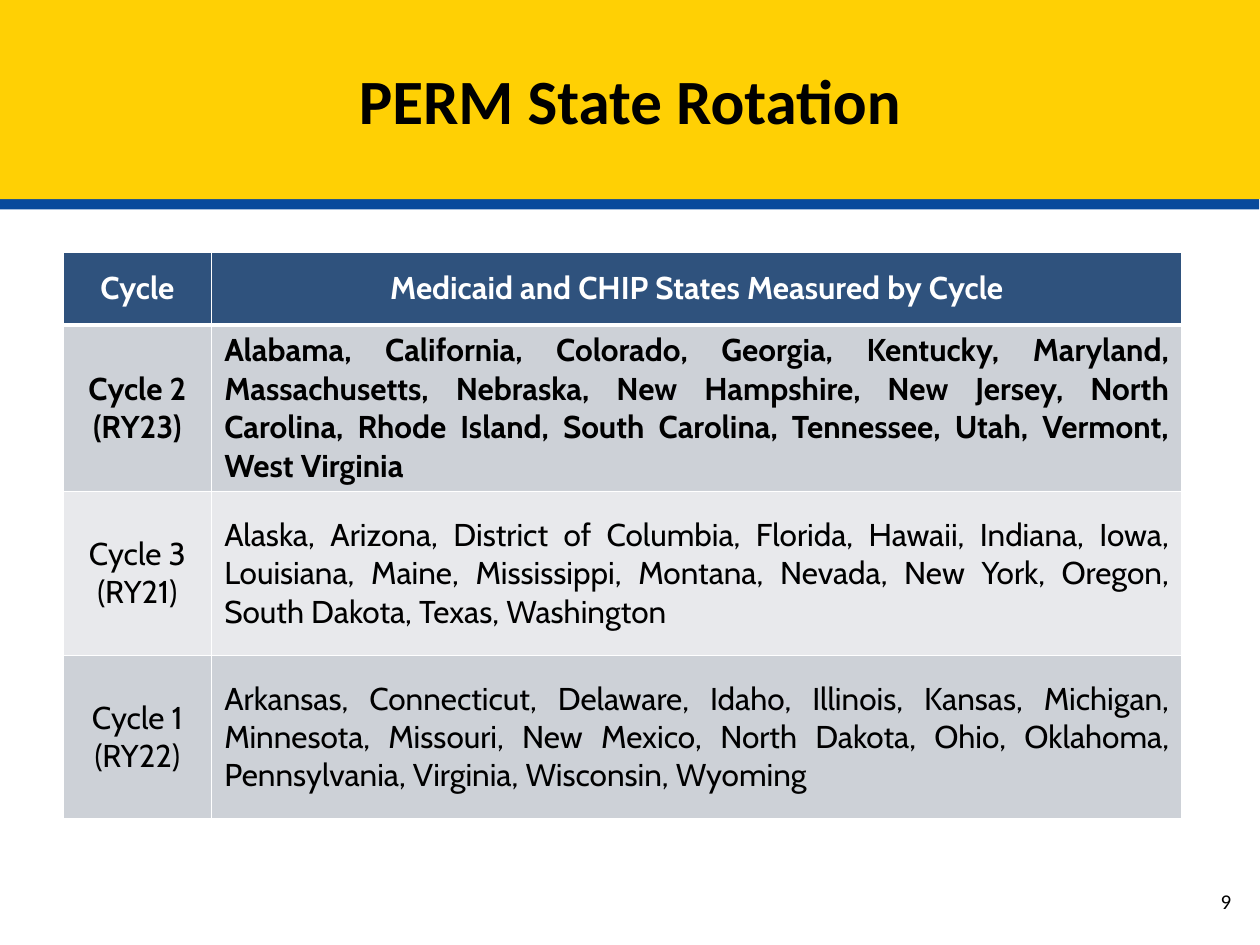
from lxml.etree import SubElement
from pptx import Presentation
from pptx.dml.color import RGBColor
from pptx.enum.shapes import MSO_SHAPE
from pptx.enum.text import MSO_ANCHOR, PP_ALIGN
from pptx.oxml.ns import qn
from pptx.util import Inches, Pt

TITLE = "PERM State Rotation"
PAGE = "9"
HEADER = ("Cycle", "Medicaid and CHIP States Measured by Cycle")
CYCLES = [
    ("Cycle 2\n(RY23)",
     "Alabama, California, Colorado, Georgia, Kentucky, Maryland, Massachusetts, "
     "Nebraska, New Hampshire, New Jersey, North Carolina, Rhode Island, "
     "South Carolina, Tennessee, Utah, Vermont, West Virginia"),
    ("Cycle 3\n(RY21)",
     "Alaska, Arizona, District of Columbia, Florida, Hawaii, Indiana, Iowa, "
     "Louisiana, Maine, Mississippi, Montana, Nevada, New York, Oregon, "
     "South Dakota, Texas, Washington"),
    ("Cycle 1\n(RY22)",
     "Arkansas, Connecticut, Delaware, Idaho, Illinois, Kansas, Michigan, "
     "Minnesota, Missouri, New Mexico, North Dakota, Ohio, Oklahoma, "
     "Pennsylvania, Virginia, Wisconsin, Wyoming"),
]
COL_WIDTHS = (1.18, 7.7)
ROW_HEIGHTS = (0.58, 1.3, 1.3, 1.3)
HEADER_FILL, BANDS = "2F527D", ("CDD1D7", "E8E9EC")


def rgb(value):
    return RGBColor.from_string(value)


def fill(target, color):
    target.fill.solid()
    target.fill.fore_color.rgb = rgb(color)


def write(tf, text, font, size, color="000000", bold=False, align=PP_ALIGN.CENTER):
    tf.text = text
    tf.word_wrap = True
    for p in tf.paragraphs:
        p.alignment = align
        for r in p.runs:
            r.font.name, r.font.size, r.font.bold = font, Pt(size), bold
            r.font.color.rgb = rgb(color)


def add_shadow(sp, color, distance, angle):
    effects = sp._element.spPr.find(qn("a:effectLst"))
    shadow = SubElement(effects, qn("a:outerShdw"), dist=str(Pt(distance)),
                        dir=str(angle * 60000), algn="t", rotWithShape="0")
    SubElement(shadow, qn("a:srgbClr"), val=color)


def set_borders(cell, bottom):
    tcPr = cell._tc.get_or_add_tcPr()
    widths = {"a:lnL": 1, "a:lnR": 1, "a:lnT": 1, "a:lnB": bottom}
    for i, (tag, width) in enumerate(widths.items()):
        ln = SubElement(tcPr, qn(tag), w=str(Pt(width)))
        SubElement(SubElement(ln, qn("a:solidFill")), qn("a:srgbClr"), val="FFFFFF")
        tcPr.insert(i, ln)  # borders come before the fill


prs = Presentation()
prs.slide_width, prs.slide_height = Inches(10), Inches(7.5)
s = prs.slides.add_slide(prs.slide_layouts[6])

# Title band, its shadow forming the blue rule
band = s.shapes.add_shape(MSO_SHAPE.RECTANGLE, 0, 0, prs.slide_width, Inches(1.58))
band.shadow.inherit = False
fill(band, "FFD004")
band.line.fill.background()
add_shadow(band, "084A9C", 6, 94)
band.text_frame.vertical_anchor = MSO_ANCHOR.MIDDLE
write(band.text_frame, TITLE, "Calibri", 36, bold=True)

# Cycle table; the current cycle is bold
rows = [HEADER] + CYCLES
table = s.shapes.add_table(len(rows), len(HEADER), Inches(0.5), Inches(2),
                           Inches(sum(COL_WIDTHS)), Inches(sum(ROW_HEIGHTS))).table
for col, width in zip(table.columns, COL_WIDTHS):
    col.width = Inches(width)
for row, height in zip(table.rows, ROW_HEIGHTS):
    row.height = Inches(height)
for i, texts in enumerate(rows):
    header = i == 0
    for j, text in enumerate(texts):
        cell = table.cell(i, j)
        cell.vertical_anchor = MSO_ANCHOR.MIDDLE
        fill(cell, HEADER_FILL if header else BANDS[(i - 1) % 2])
        set_borders(cell, bottom=3 if header else 1)
        if i == 1:
            cell._tc.tcPr.find(qn("a:lnT")).set("w", str(Pt(3)))
        write(cell.text_frame, text, "Cabin", 18,
              color="FFFFFF" if header else "000000", bold=i <= 1,
              align=PP_ALIGN.JUSTIFY if j and not header else PP_ALIGN.CENTER)

# Page number
number = s.shapes.add_textbox(Inches(7.54), Inches(6.95), Inches(2.33), Inches(0.4))
number.text_frame.vertical_anchor = MSO_ANCHOR.MIDDLE
write(number.text_frame, PAGE, "Calibri", 12, align=PP_ALIGN.RIGHT)

prs.save("out.pptx")
